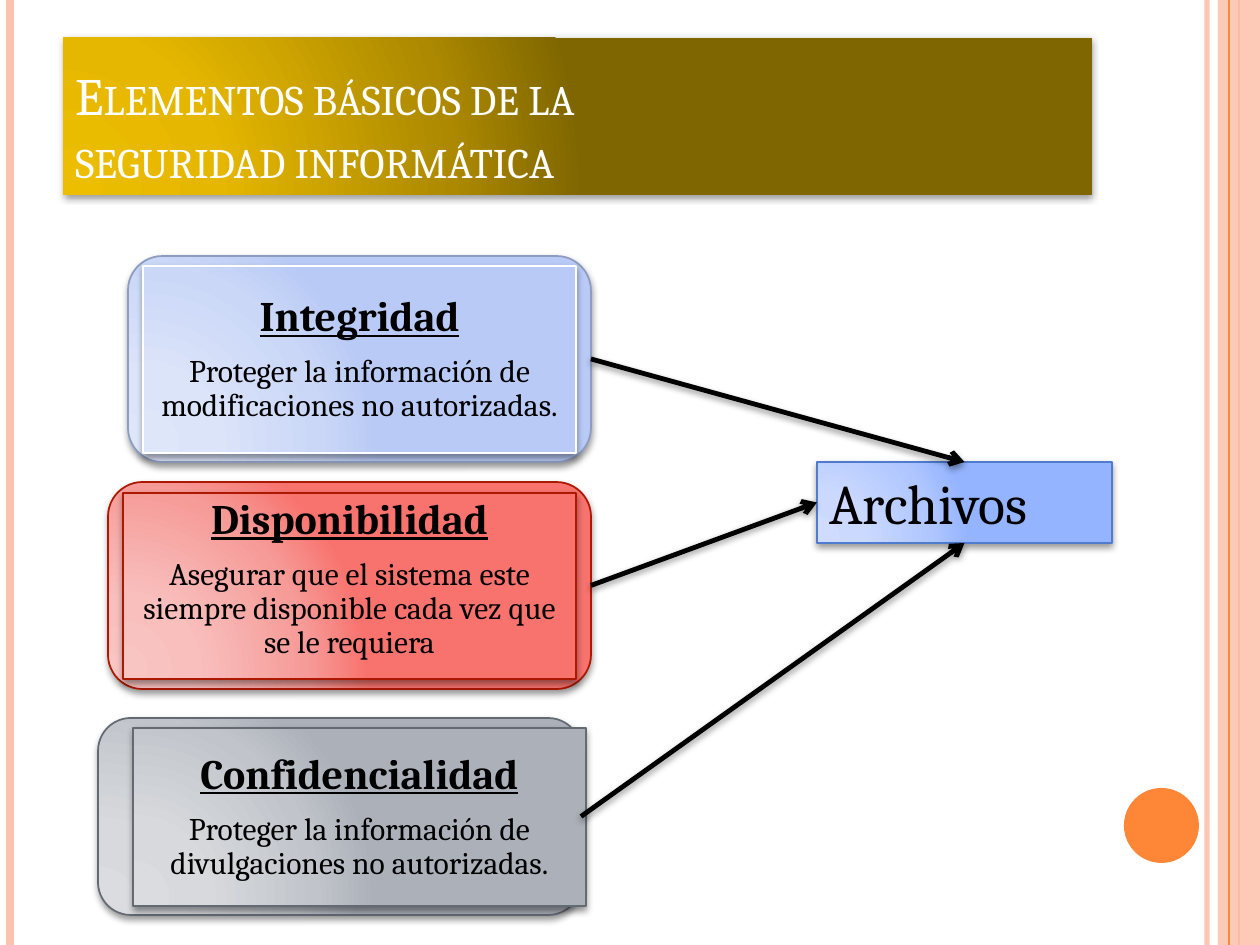
"""Build a slide linking three security principles to the files they protect."""
import pptx
import pptx.dml.color
import pptx.enum.shapes
import pptx.enum.text
import pptx.oxml
import pptx.oxml.ns
import pptx.util

WIDTH, HEIGHT = 1260, 945
FONT = "Cambria"
SHAPE = pptx.enum.shapes.MSO_SHAPE
ANCHOR = pptx.enum.text.MSO_ANCHOR
CENTER = pptx.enum.text.PP_ALIGN.CENTER
STOPS = (0, 30, 75, 100)

TITLE = ("Elementos básicos de la", "seguridad informática")
TITLE_BOX = (63, 38, 1029, 157)
TITLE_COLORS = ("EDBE00", "E5B700", "AC8900", "7F6600")
TARGET = "Archivos"
TARGET_BOX = (817, 462, 295, 81)
TARGET_COLORS = ("CFDCFF", "CBD9FF", "AFC6FF", "95B4FF")

PRINCIPLES = [
    {"name": "Integridad", "detail": "Proteger la información de modificaciones no autorizadas.",
     "card": (128, 256, 463, 206), "label": (143, 266, 433, 187), "anchor": ANCHOR.MIDDLE, "top": 15,
     "colors": ("DEE6FA", "DBE4F9", "CAD7F7", "B8CAF5"), "lines": ("8D9CBF", "FFFFFF"), "site": 0},
    {"name": "Confidencialidad", "detail": "Proteger la información de divulgaciones no autorizadas.",
     "card": (98, 718, 483, 197), "label": (133, 728, 453, 178), "anchor": ANCHOR.MIDDLE, "top": 15,
     "colors": ("DADCE0", "D7D9DD", "C1C5CB", "ABB0B9"), "lines": ("636A74", "636A74"), "site": 2},
    {"name": "Disponibilidad",
     "detail": "Asegurar que el sistema este siempre disponible cada vez que se le requiera",
     "card": (108, 482, 483, 207), "label": (123, 493, 453, 186), "anchor": ANCHOR.TOP, "top": 5,
     "colors": ("F8C5C3", "F8BFBD", "F69B98", "F8736E"), "lines": ("AC1800", "AC1800"), "site": 1},
]

STRIPES = [(1207, "FEC3AE", 3, 93), (10, "FEC3AE", 4.5, 100), (1239, "FE8637", 1.5, 100)]
BAND = (1218, 0, 42, HEIGHT)
BAND_STRIPE = (1229, "FE8637", 0.75, 100)
DOT = (1124, 788, 75, 75)


def px(length):
    return pptx.util.Emu(round(length * 914400 / 126))


def rgb(color):
    return pptx.dml.color.RGBColor.from_string(color)


def element(text):
    return pptx.oxml.parse_xml(text.replace(">", f" {pptx.oxml.ns.nsdecls('a')}>", 1))


def find(item, tag):
    return next(item._element.spPr.iter(pptx.oxml.ns.qn(tag)))


def set_alpha(item, percent):
    find(item, "a:srgbClr").append(element(f'<a:alpha val="{percent * 1000}"></a:alpha>'))


def add_shadow(item, alpha, distance):
    item._element.spPr.append(element(
        f'<a:effectLst><a:outerShdw blurRad="50800" dist="{pptx.util.Pt(distance)}" dir="5400000" '
        f'rotWithShape="0"><a:srgbClr val="000000"><a:alpha val="{alpha * 1000}"/></a:srgbClr>'
        '</a:outerShdw></a:effectLst>'))


def add_shape(page, kind, box, fill, line=None):
    shape = page.shapes.add_shape(kind, *map(px, box))
    if isinstance(fill, str):
        shape.fill.solid()
        shape.fill.fore_color.rgb = rgb(fill)
    else:
        shape.fill.gradient()
        stops = "".join(f'<a:gs pos="{stop * 1000}"><a:srgbClr val="{color}"/></a:gs>'
                        for stop, color in zip(STOPS, fill))
        shape._element.spPr.replace(find(shape, "a:gradFill"), element(
            f'<a:gradFill rotWithShape="1"><a:gsLst>{stops}</a:gsLst><a:path path="circle">'
            '<a:fillToRect l="5000" t="100000" r="120000" b="10000"/></a:path></a:gradFill>'))
    if line:
        shape.line.color.rgb = rgb(line)
        shape.line.width = pptx.util.Pt(1)
    else:
        shape.line.fill.background()
    if isinstance(fill, str):
        shape.shadow.inherit = False
    else:
        add_shadow(shape, 40, 2 if line else 1.6)
    shape.text_frame.word_wrap = True
    return shape


def add_line(page, start, end, color, width):
    line = page.shapes.add_connector(pptx.enum.shapes.MSO_CONNECTOR.STRAIGHT,
                                     *map(px, start + end))
    line.line.color.rgb = rgb(color)
    line.line.width = pptx.util.Pt(width)
    return line


def add_stripe(page, left, color, width, alpha):
    stripe = add_line(page, (left, 0), (left, HEIGHT), color, width)
    set_alpha(stripe, alpha)
    stripe._element.spPr.append(element("<a:effectLst></a:effectLst>"))


def style(para, size, color="000000", align=pptx.enum.text.PP_ALIGN.LEFT):
    para.alignment = align
    para.font.name = FONT
    para.font.size = pptx.util.Pt(size)
    para.font.color.rgb = rgb(color)


def add_title(page):
    box = add_shape(page, SHAPE.RECTANGLE, TITLE_BOX, TITLE_COLORS)
    box.text_frame.vertical_anchor = ANCHOR.BOTTOM
    para = box.text_frame.paragraphs[0]
    para.text = "\v".join(TITLE)
    style(para, 30, "FFFFFF")
    for span in para.runs:
        span.font._element.set("cap", "small")


def add_principle(page, item):
    card_line, label_line = item["lines"]
    card = add_shape(page, SHAPE.ROUNDED_RECTANGLE, item["card"], item["colors"], card_line)
    label = add_shape(page, SHAPE.RECTANGLE, item["label"], item["colors"], label_line)
    frame = label.text_frame
    frame.vertical_anchor = item["anchor"]
    frame.margin_left = frame.margin_right = frame.margin_bottom = px(15)
    frame.margin_top = px(item["top"])
    frame.text = item["name"] + "\n" + item["detail"]
    for para, size in zip(frame.paragraphs, (24, 18)):
        style(para, size, align=CENTER)
        para.line_spacing = 0.9
        para.space_after = pptx.util.Pt(size * 0.35)
    heading = frame.paragraphs[0]
    heading.font.bold = heading.font.underline = True
    return card


def add_arrow(page, card, target, site):
    arrow = add_line(page, (0, 0), (0, 0), "000000", 2.75)
    arrow.begin_connect(card, 3)
    arrow.end_connect(target, site)
    find(arrow, "a:ln").append(element('<a:tailEnd type="arrow"></a:tailEnd>'))
    add_shadow(arrow, 42, 1.6)


def main():
    deck = pptx.Presentation()
    deck.slide_width, deck.slide_height = px(WIDTH), px(HEIGHT)
    page = deck.slides.add_slide(deck.slide_layouts[6])
    for stripe in STRIPES:
        add_stripe(page, *stripe)
    set_alpha(add_shape(page, SHAPE.RECTANGLE, BAND, "FEC3AE"), 87)
    add_stripe(page, *BAND_STRIPE)
    add_shape(page, SHAPE.OVAL, DOT, "FE8637")
    add_title(page)
    cards = [add_principle(page, item) for item in PRINCIPLES]
    target = add_shape(page, SHAPE.RECTANGLE, TARGET_BOX, TARGET_COLORS, "4F7CCF")
    target.text_frame.vertical_anchor = ANCHOR.TOP
    target.text_frame.text = TARGET
    style(target.text_frame.paragraphs[0], 32)
    for card, item in zip(cards, PRINCIPLES):
        add_arrow(page, card, target, item["site"])
    deck.save("out.pptx")


if __name__ == "__main__":
    main()
